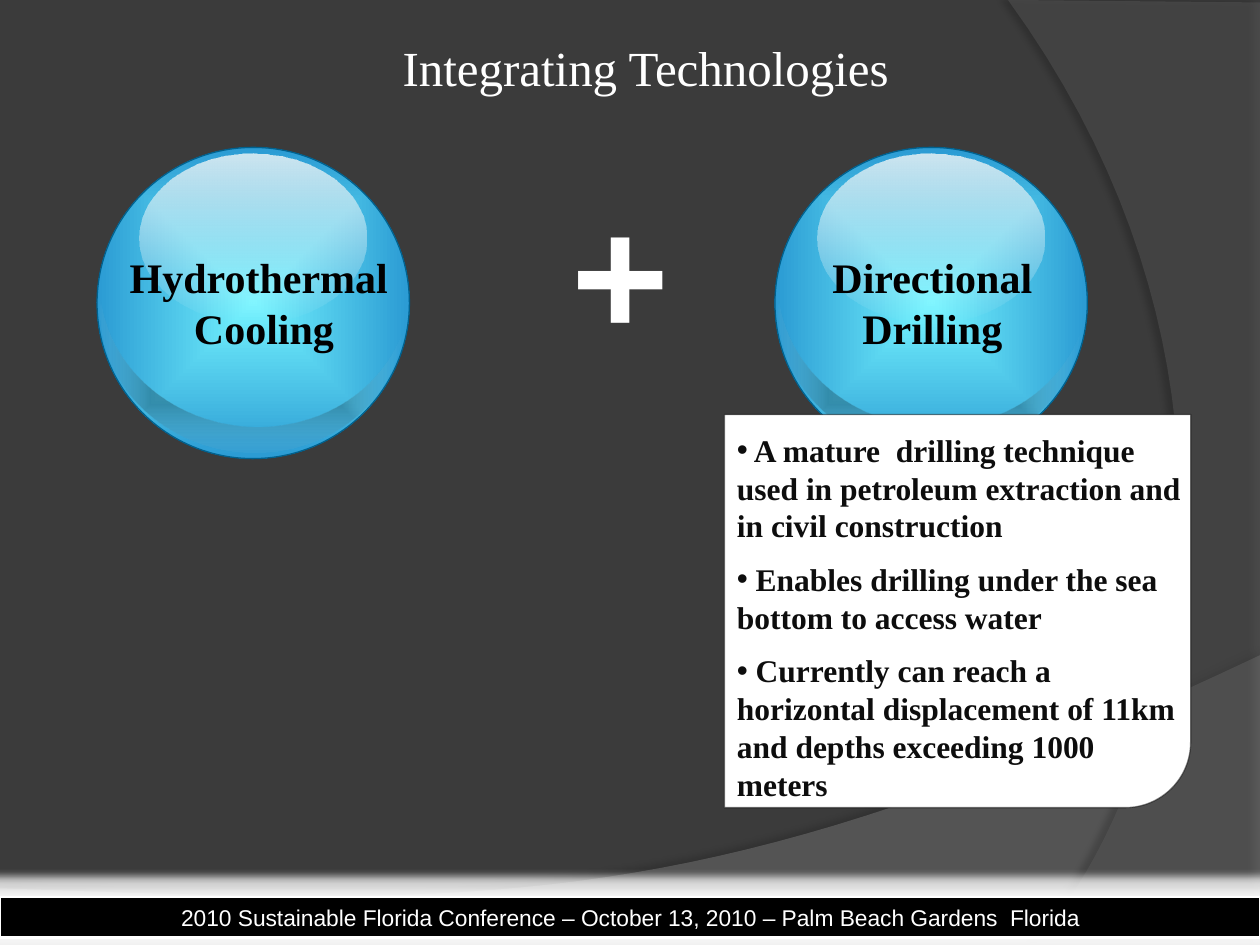
from lxml.etree import SubElement
from pptx import Presentation
from pptx.dml.color import RGBColor as RGB
from pptx.enum.shapes import MSO_SHAPE as SHAPE
from pptx.enum.text import MSO_ANCHOR as ANCHOR, PP_ALIGN as ALIGN
from pptx.oxml.ns import qn
from pptx.util import Inches, Pt

TITLE = "Integrating Technologies"
FOOTER = "2010 Sustainable Florida Conference – October 13, 2010 – Palm Beach Gardens  Florida"
SPHERES = [
    {"left": 6.15, "label": ["Directional", "Drilling"], "label_left": 6.5, "label_width": 1.8},
    {"left": 0.77, "label": ["Hydrothermal ", "Cooling"], "label_left": 0.92, "label_width": 2.35},
]
DRILLING_FACTS = [
    " A mature  drilling technique used in petroleum extraction and in civil construction",
    " Enables drilling under the sea bottom to access water",
    " Currently can reach a horizontal displacement of 11km and depths exceeding 1000 meters",
]
SWOOSHES = [
    {"before": [(10, 5.2)], "curve": [(10, 5.2), (5.59, 7.29), (3.91, 7.19), (0, 7.05)],
     "after": [(0, 7.51), (10, 7.51)], "fill": "7F7F7F", "alpha": 45,
     "shadow": {"alpha": 35, "blur": 4, "dist": 3.5, "dir": 270}},
    {"before": [(10, 0.02), (10, 7.5)], "curve": [(8.21, 7.5), (9.35, 6.19), (10.18, 3), (8, 0)],
     "after": [], "fill": "5E5E5E", "alpha": 40,
     "shadow": {"alpha": 45, "blur": 4, "dist": 4, "dir": 180}},
]
THEME = {
    "background": "3B3B3B", "white": "FFFFFF", "black": "000000", "sphere_line": "00618E",
    "sphere": [(0, "74F4FF", 100), (100, "208ECD", 100)],
    "gloss": [(0, "FFFCF9", 77), (100, "FFFFFF", 0)],
    "shade": [(24, "000000", 24), (100, "FFFFFF", 0)],
    "title": {"name": "Times New Roman", "size": 28, "color": "FFFFFF"},
    "label": {"name": "Times New Roman", "size": 24, "color": "000000", "bold": True},
    "fact": {"name": "Times New Roman", "size": 18, "color": "0D0D0D", "bold": True},
    "plus": {"name": "Arial", "size": 96, "color": "FFFFFF", "bold": True},
    "footer": {"name": "Arial", "size": 13, "color": "FFFFFF"},
}


def add_node(parent, tag, **values):
    return SubElement(parent, qn(f"a:{tag}"), {key: str(value) for key, value in values.items()})


def add_color(parent, color, alpha=100):
    add_node(add_node(parent, "srgbClr", val=color), "alpha", val=alpha * 1000)


def set_gradient(shape, stops, radial):
    shape.fill.gradient()
    gradient = shape._element.spPr.find(qn("a:gradFill"))
    for child in list(gradient):
        gradient.remove(child)
    stop_list = add_node(gradient, "gsLst")
    for position, color, alpha in stops:
        add_color(add_node(stop_list, "gs", pos=position * 1000), color, alpha)
    if radial:
        center = add_node(gradient, "path", path="shape")
        add_node(center, "fillToRect", **dict.fromkeys("ltrb", 50000))
    else:
        add_node(gradient, "lin", ang=90 * 60000, scaled=0)


def paint(shape, fill=None, line=None, width=0.75):
    shape.shadow.inherit = False
    if fill:
        shape.fill.solid()
        shape.fill.fore_color.rgb = RGB.from_string(fill)
    if line:
        shape.line.color.rgb = RGB.from_string(line)
        shape.line.width = Pt(width)
    else:
        shape.line.fill.background()


def set_alpha(fill_parent, alpha):
    color = fill_parent.find(f"{qn('a:solidFill')}/{qn('a:srgbClr')}")
    add_node(color, "alpha", val=alpha * 1000)


def add_shape(slide, kind, box, rotation=0):
    shape = slide.shapes.add_shape(kind, *map(Inches, box))
    shape.rotation = rotation
    return shape


def write(frame, texts, style, align=ALIGN.CENTER, bullet=None, gap=0):
    for index, text in enumerate(texts):
        paragraph = frame.paragraphs[0] if index == 0 else frame.add_paragraph()
        paragraph.alignment = align
        if index and gap:
            paragraph.space_before = Pt(gap)
        if bullet:
            properties = paragraph._p.get_or_add_pPr()
            add_node(properties, "buFont", typeface="Arial")
            add_node(properties, "buChar", char=bullet)
        run = paragraph.add_run()
        run.text = text
        formats = {**style, "size": Pt(style["size"])}
        run.font.color.rgb = RGB.from_string(formats.pop("color"))
        for key, value in formats.items():
            setattr(run.font, key, value)


def add_text(slide, box, texts, style, wrap=True, **layout):
    frame = slide.shapes.add_textbox(*map(Inches, box)).text_frame
    frame.word_wrap = wrap
    write(frame, texts, style, **layout)


def curve_points(controls, steps=40):
    for step in range(1, steps + 1):
        t = step / steps
        weights = ((1 - t) ** 3, 3 * t * (1 - t) ** 2, 3 * t * t * (1 - t), t ** 3)
        yield tuple(sum(w * p[axis] for w, p in zip(weights, controls)) for axis in (0, 1))


def add_swoosh(slide, swoosh):
    points = [*swoosh["before"], swoosh["curve"][0], *curve_points(swoosh["curve"]), *swoosh["after"]]
    outline = [(Inches(x), Inches(y)) for x, y in points]
    builder = slide.shapes.build_freeform(*outline[0])
    builder.add_line_segments(outline[1:], close=True)
    shape = builder.convert_to_shape()
    paint(shape, swoosh["fill"])
    properties = shape._element.spPr
    set_alpha(properties, swoosh["alpha"])
    shadow = swoosh["shadow"]
    effect = add_node(properties.find(qn("a:effectLst")), "outerShdw",
                      blurRad=Pt(shadow["blur"]), dist=Pt(shadow["dist"]),
                      dir=shadow["dir"] * 60000, algn="ctr", rotWithShape=0)
    add_color(effect, THEME["black"], shadow["alpha"])


def add_sphere(slide, sphere):
    left = sphere["left"]
    parts = [
        (SHAPE.OVAL, (left, 1.17, 2.48, 2.47), 350.9, "sphere", True, THEME["sphere_line"]),
        (SHAPE.OVAL, (left + 0.34, 1.22, 1.8, 1.34), 0, "gloss", False, None),
        (SHAPE.MOON, (left + 0.63, 1.84, 1.09, 2.4), 275.9, "shade", True, None),
    ]
    for kind, box, rotation, gradient, radial, line in parts:
        part = add_shape(slide, kind, box, rotation)
        paint(part, line=line)
        set_gradient(part, THEME[gradient], radial)
        if kind == SHAPE.MOON:
            part.adjustments[0] = 0.19
    add_text(slide, (sphere["label_left"], 1.95, sphere["label_width"], 0.91),
             sphere["label"], THEME["label"], wrap=False)


def add_footer(slide):
    footer = add_shape(slide, SHAPE.RECTANGLE, (0, 7.12, 10, 0.32))
    paint(footer, THEME["black"], THEME["white"], 1.5)
    glow = add_node(footer._element.spPr.find(qn("a:effectLst")), "glow", rad=Inches(0.12))
    add_color(glow, THEME["white"], 75)
    footer.text_frame.vertical_anchor = ANCHOR.MIDDLE
    write(footer.text_frame, [FOOTER], THEME["footer"])


def add_card(slide):
    card = add_shape(slide, SHAPE.ROUND_1_RECTANGLE, (5.75, 3.29, 3.7, 3.12), 180)
    card._element.spPr.find(qn("a:xfrm")).set("flipH", "1")
    paint(card, THEME["white"], THEME["black"])
    set_alpha(card._element.spPr.find(qn("a:ln")), 47)


def main():
    deck = Presentation()
    deck.slide_width, deck.slide_height = Inches(10), Inches(7.5)
    slide = deck.slides.add_slide(deck.slide_layouts[6])
    slide.background.fill.solid()
    slide.background.fill.fore_color.rgb = RGB.from_string(THEME["background"])
    for swoosh in SWOOSHES:
        add_swoosh(slide, swoosh)
    add_footer(slide)
    add_text(slide, (1.25, 0.25, 7.75, 0.57), [TITLE], THEME["title"])
    for sphere in SPHERES:
        add_sphere(slide, sphere)
    add_card(slide)
    add_text(slide, (4.44, 1.29, 0.89, 1.72), ["+"], THEME["plus"], wrap=False)
    add_text(slide, (5.75, 3.37, 3.75, 3.4), DRILLING_FACTS, THEME["fact"],
             align=ALIGN.LEFT, bullet="•", gap=9)
    deck.save("out.pptx")


if __name__ == "__main__":
    main()
